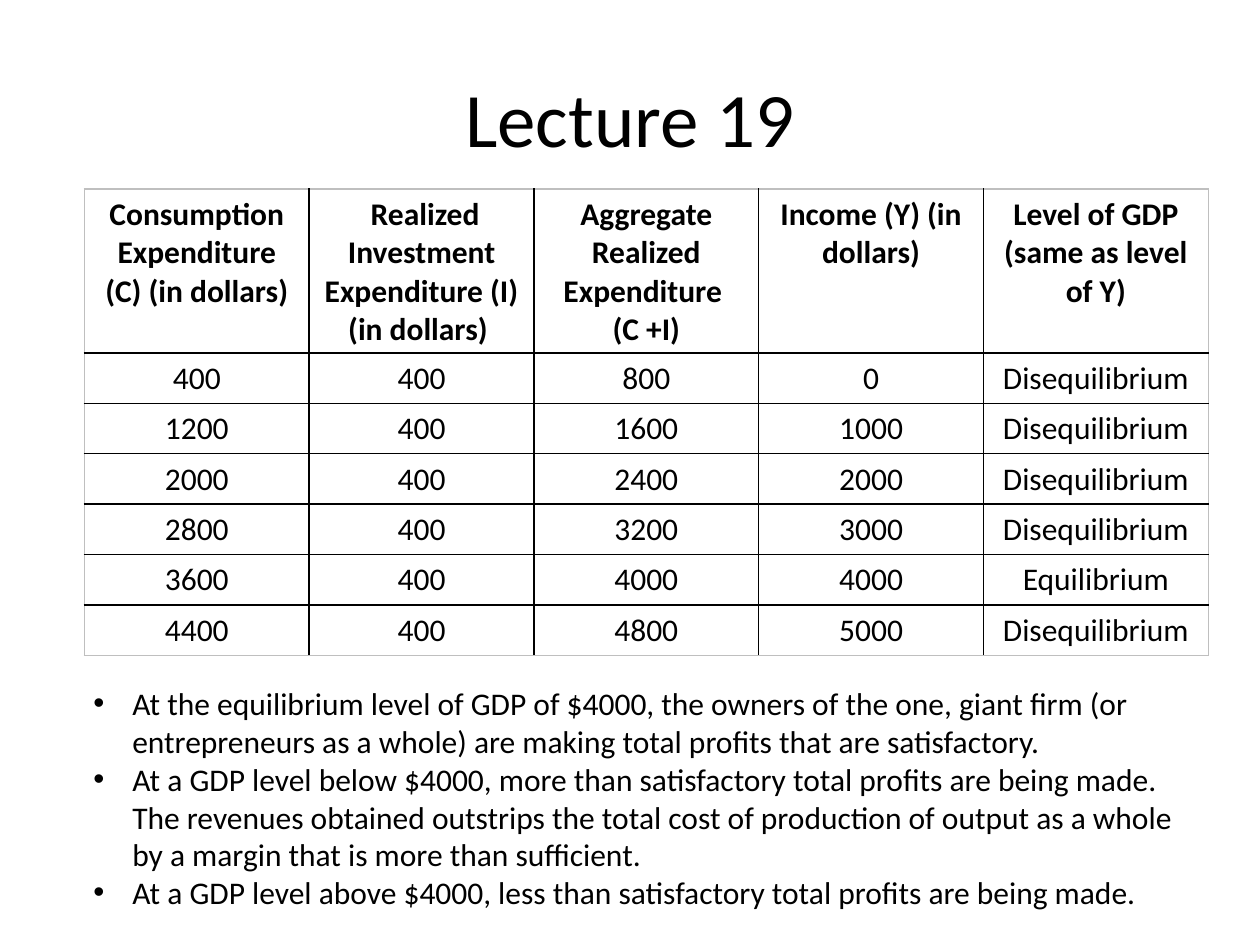
from pptx import Presentation
from pptx.dml.color import RGBColor
from pptx.enum.text import MSO_ANCHOR as Anchor, MSO_AUTO_SIZE as AutoSize, PP_ALIGN as Align
from pptx.oxml import parse_xml
from pptx.oxml.ns import nsdecls
from pptx.util import Inches, Pt

COLORS = {"text": "000000", "inner": "000000", "outer": "BFBFBF"}

HEADERS = [
    "Consumption Expenditure (C) (in dollars)",
    " Realized Investment Expenditure (I) (in dollars) ",
    "Aggregate Realized Expenditure \n(C +I)",
    "Income (Y) (in dollars)",
    "Level of GDP (same as level of Y)",
]
ROWS = [
    ("400", "400", "800", "0", "Disequilibrium"),
    ("1200", "400", "1600", "1000", "Disequilibrium"),
    ("2000", "400", "2400", "2000", "Disequilibrium"),
    ("2800", "400", "3200", "3000", "Disequilibrium"),
    ("3600", "400", "4000", "4000", "Equilibrium"),
    ("4400", "400", "4800", "5000", "Disequilibrium"),
]
POINTS = [
    "At the equilibrium level of GDP of $4000, the owners of the one, giant firm "
    "(or entrepreneurs as a whole) are making total profits that are satisfactory.",
    "At a GDP level below $4000, more than satisfactory total profits are being made. "
    "The revenues obtained outstrips the total cost of production of output as a whole "
    "by a margin that is more than sufficient.",
    "At a GDP level above $4000, less than satisfactory total profits are being made.",
]


class LecturePage:
    font = "Calibri"
    text_size = 18
    title_size = 44

    def __init__(self, deck):
        self.page = deck.slides.add_slide(deck.slide_layouts[1])

    def place(self, box, left, top, width, height):
        box.left, box.top = Inches(left), Inches(top)
        box.width, box.height = Inches(width), Inches(height)

    def format_text(self, frame, size, bold=False, align=Align.LEFT):
        for para in frame.paragraphs:
            para.alignment = align
            for span in para.runs:
                span.font.name = self.font
                span.font.size = Pt(size)
                span.font.bold = bold
                span.font.color.rgb = RGBColor.from_string(COLORS["text"])

    def title(self, text, *place):
        box = self.page.shapes.title
        self.place(box, *place)
        box.text_frame.text = text
        box.text_frame.vertical_anchor = Anchor.MIDDLE
        self.format_text(box.text_frame, self.title_size, align=Align.CENTER)

    def bullets(self, points, *place):
        box = self.page.placeholders[1]
        self.place(box, *place)
        frame = box.text_frame
        frame.text = "\n".join(points)
        frame.auto_size = AutoSize.SHAPE_TO_FIT_TEXT
        self.format_text(frame, self.text_size)
        for para in frame.paragraphs:
            para.space_before = Pt(0)
            props = para._p.get_or_add_pPr()
            props.set("marL", str(Inches(0.31)))
            props.set("indent", str(-Inches(0.31)))
            props.append(parse_xml(f'<a:buChar {nsdecls("a")} char="•"/>'))

    def border(self, cell, side, color):
        cell._tc.get_or_add_tcPr().append(parse_xml(
            f'<a:{side} {nsdecls("a")} w="{Pt(1)}"><a:solidFill>'
            f'<a:srgbClr val="{color}"/></a:solidFill></a:{side}>'))

    def table(self, rows, left, top, width, header_height, row_height):
        height = header_height + row_height * (len(rows) - 1)
        grid = self.page.shapes.add_table(
            len(rows), len(rows[0]), Inches(left), Inches(top),
            Inches(width), Inches(height)).table
        grid.horz_banding = False
        last_row, last_column = len(rows) - 1, len(rows[0]) - 1
        for r, values in enumerate(rows):
            grid.rows[r].height = Inches(row_height if r else header_height)
            for c, value in enumerate(values):
                cell = grid.cell(r, c)
                cell.text_frame.text = value
                self.format_text(cell.text_frame, self.text_size, r == 0, Align.CENTER)
                # Borders come before the fill in the cell properties
                edges = {"lnL": c == 0, "lnR": c == last_column,
                         "lnT": r == 0, "lnB": r == last_row}
                for side, is_outer in edges.items():
                    self.border(cell, side, COLORS["outer" if is_outer else "inner"])
                cell.fill.background()


def main():
    deck = Presentation()
    deck.slide_width, deck.slide_height = Inches(10), Inches(7.5)
    lecture = LecturePage(deck)

    # Heading
    lecture.title("Lecture 19", 0.5, 0.3, 9, 1.25)
    # Income and expenditure levels
    lecture.table([HEADERS] + ROWS, 0.67, 1.5, 8.92, 1.26, 0.39)
    # Conclusions
    lecture.bullets(POINTS, 0.64, 5.38, 8.94, 1.92)

    deck.save("out.pptx")


if __name__ == "__main__":
    main()
